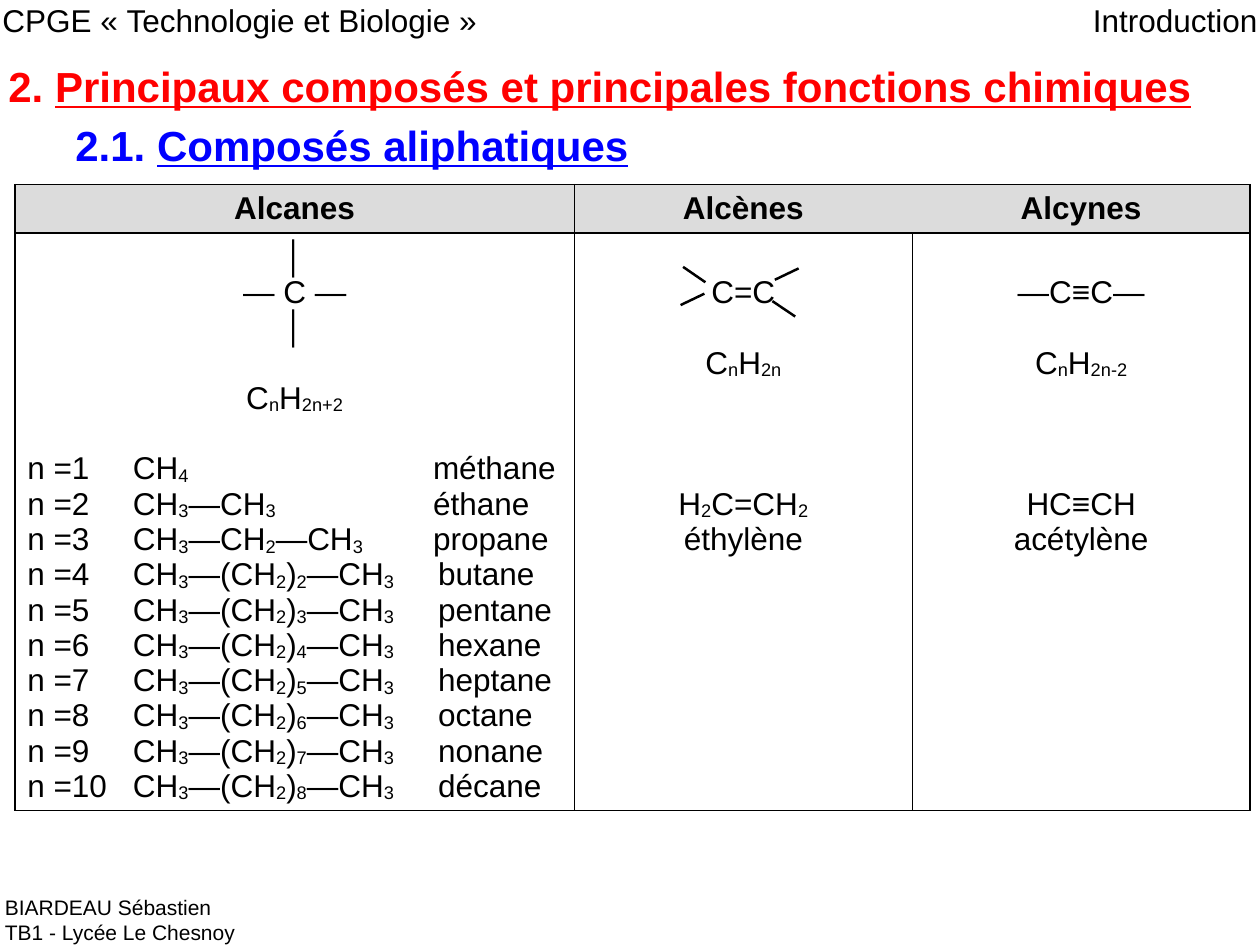
from dataclasses import dataclass
from lxml.etree import SubElement
from pptx import Presentation
from pptx.dml.color import RGBColor
from pptx.enum.shapes import MSO_CONNECTOR as Connector
from pptx.enum.text import MSO_ANCHOR as Anchor, PP_ALIGN as Align
from pptx.oxml.ns import qn
from pptx.util import Cm, Pt

COLORS = {"black": "000000", "red": "FF0000", "blue": "0000FF", "header": "DCDCDC"}
FONT = "Arial"
BLANK_LINE = 20.2
MARGIN_X, MARGIN_Y = 0.25, 0.13


@dataclass
class Run:
    text: str
    size: float = 18
    color: str = "black"
    bold: bool = False
    underline: bool = False
    subscript: bool = False


@dataclass
class Label:
    left: float
    top: float
    width: float
    height: float
    lines: list[list[Run]]
    align: Align = Align.LEFT


@dataclass
class Line:
    text: str
    blanks_before: int = 0
    tabs: tuple[float, ...] = ()


@dataclass
class Bond:
    x1: float
    y1: float
    x2: float
    y2: float


LABELS = [
    Label(-0.2, -0.1, 12.5, 0.97, [[Run("CPGE «\u00a0Technologie et Biologie\u00a0»")]]),
    Label(15.21, -0.1, 10.39, 0.97, [[Run("Introduction")]], Align.RIGHT),
    Label(-0.15, 17.91, 5.5, 1.19, [[Run("BIARDEAU Sébastien", 12)],
                                    [Run("TB1 - Lycée Le Chesnoy", 12)]]),
    Label(-0.08, 1.09, 25.48, 1.19, [[
        Run("2. ", 24, "red", True),
        Run("Principaux composés et principales fonctions chimiques", 24, "red", True, True)]]),
    Label(0, 2.29, 15.21, 1.19, [[
        Run("\t2.1. ", 24, "blue", True),
        Run("Composés aliphatiques", 24, "blue", True, True)]]),
]

BONDS = [
    Bond(14.22, 5.69, 13.77, 5.38),
    Bond(16.03, 6.38, 15.57, 6.07),
    Bond(14.2, 5.92, 13.72, 6.15),
    Bond(16.1, 5.41, 15.62, 5.64),
]

HEADERS = ["Alcanes", "Alcènes", "Alcynes"]
NAMES = ["méthane", "éthane", "propane", "butane", "pentane",
         "hexane", "heptane", "octane", "nonane", "décane"]
SHORT_CHAINS = {1: "CH~4~", 2: "CH~3~―CH~3~", 3: "CH~3~―CH~2~―CH~3~"}


def alkane_line(n: int, name: str) -> Line:
    formula = SHORT_CHAINS.get(n, f"CH~3~―(CH~2~)~{n - 2}~―CH~3~")
    name_tab = 8.18 if n in SHORT_CHAINS else 8.28
    return Line(f"n ={n}\t{formula}\t{name}", int(n == 1), (2.13, name_tab))


def family_lines(bond: str, formula: str, example: str, name: str) -> list[Line]:
    return [Line(bond), Line(formula, 1), Line(example, 3), Line(name)]


ALKANES = [Line("│"), Line("― C ―"), Line("│"), Line("C~n~H~2n+2~", 1)]
ALKANES += [alkane_line(n, name) for n, name in enumerate(NAMES, 1)]
BODY = [
    ALKANES,
    family_lines("C=C", "C~n~H~2n~", "H~2~C=CH~2~", "éthylène"),
    family_lines("―C≡C―", "C~n~H~2n-2~", "HC≡CH", "acétylène"),
]


def add_run(p, run: Run) -> None:
    r = p.add_run()
    r.text = run.text
    r.font.name = FONT
    r.font.size = Pt(run.size)
    r.font.bold = run.bold
    r.font.underline = run.underline
    r.font.color.rgb = RGBColor.from_string(COLORS[run.color])
    if run.subscript:
        r._r.get_or_add_rPr().set("baseline", "-8000")


def next_paragraph(tf, index: int):
    return tf.add_paragraph() if index else tf.paragraphs[0]


def add_label(s, label: Label) -> None:
    sp = s.shapes.add_textbox(Cm(label.left), Cm(label.top), Cm(label.width), Cm(label.height))
    tf = sp.text_frame
    tf.word_wrap = True
    for i, runs in enumerate(label.lines):
        p = next_paragraph(tf, i)
        p.alignment = label.align
        for run in runs:
            add_run(p, run)


def add_bond(s, bond: Bond) -> None:
    sp = s.shapes.add_connector(Connector.STRAIGHT, Cm(bond.x1), Cm(bond.y1),
                                Cm(bond.x2), Cm(bond.y2))
    sp.line.width = Pt(1.42)
    sp.line.color.rgb = RGBColor.from_string(COLORS["black"])
    SubElement(sp._element.spPr, qn("a:effectLst"))


def set_borders(cell, hidden: str = "") -> None:
    tcPr = cell._tc.get_or_add_tcPr()
    for side in "LRTB":
        ln = SubElement(tcPr, qn(f"a:ln{side}"), w=str(Pt(0.85)))
        if side == hidden:
            SubElement(ln, qn("a:noFill"))
        else:
            fill = SubElement(ln, qn("a:solidFill"))
            SubElement(fill, qn("a:srgbClr"), val=COLORS["black"])


def fill_header(cell, text: str, hidden: str) -> None:
    set_borders(cell, hidden)
    cell.fill.solid()
    cell.fill.fore_color.rgb = RGBColor.from_string(COLORS["header"])
    cell.vertical_anchor = Anchor.MIDDLE
    p = cell.text_frame.paragraphs[0]
    p.alignment = Align.CENTER
    add_run(p, Run(text, bold=True))


def fill_body(cell, lines: list[Line]) -> None:
    set_borders(cell)
    cell.fill.background()
    for i, line in enumerate(lines):
        p = next_paragraph(cell.text_frame, i)
        p.alignment = Align.LEFT if line.tabs else Align.CENTER
        p.space_before = Pt(BLANK_LINE * line.blanks_before)
        if line.tabs:
            tab_list = SubElement(p._p.get_or_add_pPr(), qn("a:tabLst"))
            for pos in line.tabs:
                SubElement(tab_list, qn("a:tab"), pos=str(Cm(pos)), algn="l")
        for k, text in enumerate(line.text.split("~")):
            if text:
                add_run(p, Run(text, subscript=k % 2 == 1))


def add_compound_table(s) -> None:
    widths, heights = (11.28, 6.81, 6.81), (0.98, 11.62)
    table = s.shapes.add_table(2, 3, Cm(0.3), Cm(3.72), Cm(sum(widths)), Cm(sum(heights))).table
    table.first_row = table.horz_banding = False
    for row, height in zip(table.rows, heights):
        row.height = Cm(height)
    for c, width in enumerate(widths):
        table.columns[c].width = Cm(width)
        for r in range(2):
            cell = table.cell(r, c)
            cell.margin_left = cell.margin_right = Cm(MARGIN_X)
            cell.margin_top = cell.margin_bottom = Cm(MARGIN_Y)
        fill_header(table.cell(0, c), HEADERS[c], ("", "R", "L")[c])
        fill_body(table.cell(1, c), BODY[c])
        if c:
            table.cell(1, c).margin_top = Cm(MARGIN_Y) + Pt(BLANK_LINE)


def main() -> None:
    prs = Presentation()
    prs.slide_width, prs.slide_height = Cm(25.4), Cm(19.05)
    s = prs.slides.add_slide(prs.slide_layouts[6])
    add_compound_table(s)
    for label in LABELS:
        add_label(s, label)
    for bond in BONDS:
        add_bond(s, bond)
    prs.save("out.pptx")


if __name__ == "__main__":
    main()
